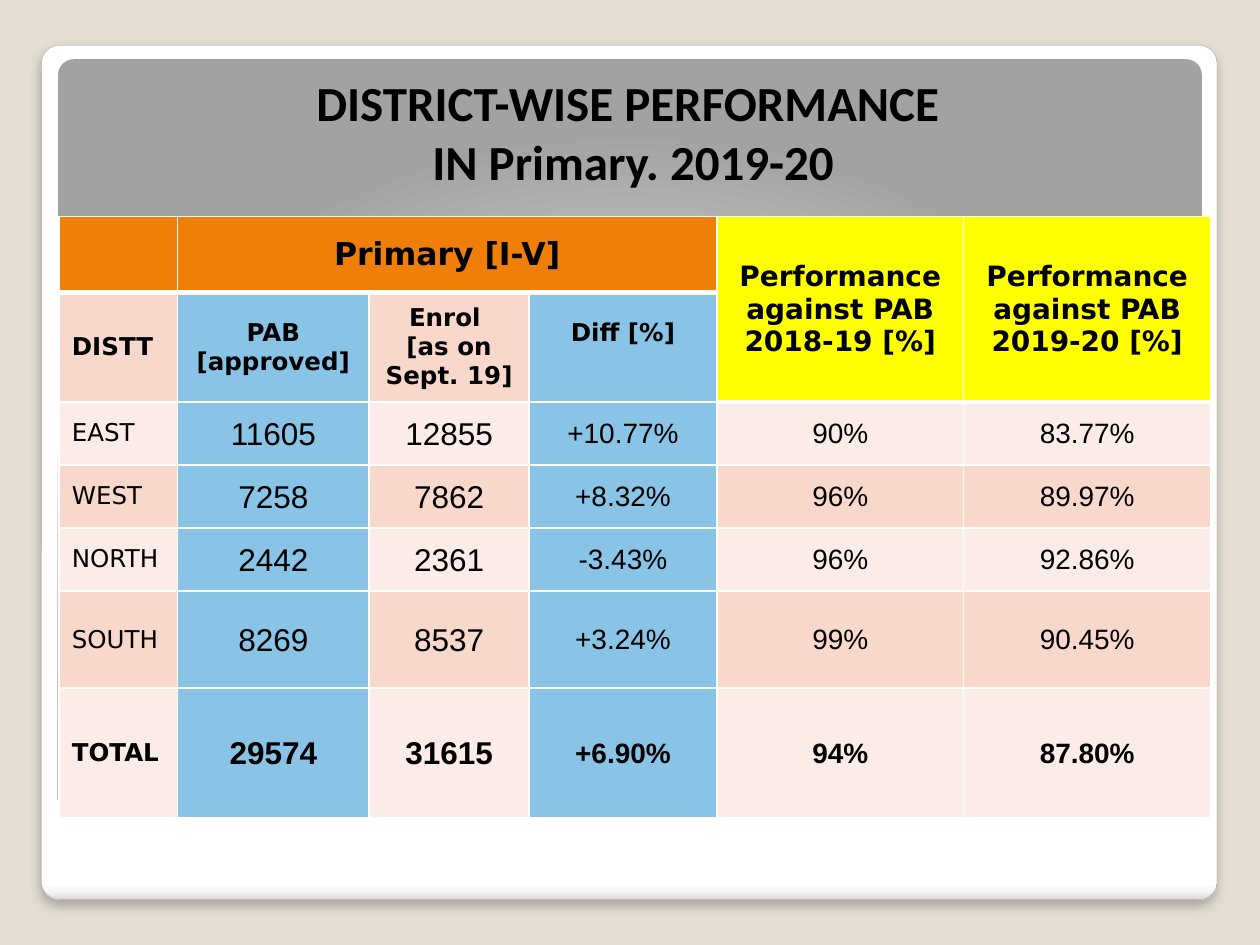
from lxml import etree
from pptx import Presentation
from pptx import util as u
from pptx.dml.color import RGBColor
from pptx.enum import shapes, text
from pptx.oxml import parse_xml
from pptx.oxml.ns import nsdecls, qn

BEIGE = RGBColor(0xE3, 0xDE, 0xD1)
EDGE = RGBColor(0xA4, 0xA4, 0xA4)
BLACK = RGBColor(0, 0, 0)
ORANGE = RGBColor(0xF0, 0x7F, 0x09)
YELLOW = RGBColor(0xFF, 0xFF, 0)
BLUE = RGBColor(0x89, 0xC3, 0xE5)
PINK = RGBColor(0xF9, 0xD8, 0xCC)
PALE = RGBColor(0xFC, 0xEC, 0xE7)

deck = Presentation()
deck.slide_width, deck.slide_height = u.Inches(10), u.Inches(7.5)
page = deck.slides.add_slide(deck.slide_layouts[5])
page.background.fill.solid()
page.background.fill.fore_color.rgb = BEIGE


def add_panel(bounds, stops, direction):
    """Rounded panel with a gradient given as (percent, colour) stops."""
    panel = page.shapes.add_shape(shapes.MSO_SHAPE.ROUNDED_RECTANGLE,
                                  *[u.Inches(v) for v in bounds])
    panel.adjustments[0] = 0.021
    panel.shadow.inherit = False
    panel.line.fill.background()
    marks = "".join(f'<a:gs pos="{at * 1000}"><a:srgbClr val="{colour}"/></a:gs>'
                    for at, colour in stops)
    gradient = parse_xml(f'<a:gradFill {nsdecls("a")} rotWithShape="1">'
                         f'<a:gsLst>{marks}</a:gsLst>{direction}</a:gradFill>')
    panel._element.spPr.find(qn("a:prstGeom")).addnext(gradient)
    return panel


def write_cell(cell, lines, fill, size, font="DejaVu Sans", bold=False,
               align=text.PP_ALIGN.CENTER):
    cell.fill.solid()
    cell.fill.fore_color.rgb = fill
    cell.vertical_anchor = text.MSO_ANCHOR.MIDDLE
    for number, line in enumerate(lines):
        para = cell.text_frame.paragraphs[0] if number == 0 else cell.text_frame.add_paragraph()
        para.alignment = align
        span = para.add_run()
        span.text = line
        span.font.name, span.font.size = font, u.Pt(size)
        span.font.bold, span.font.color.rgb = bold, BLACK


# Background panels
sheet = add_panel((0.33, 0.36, 9.33, 6.78),
                  [(0, "FFFFFF"), (98, "FFFFFF"), (99, "F7F7F7"), (100, "DADADA")],
                  '<a:lin ang="5400000" scaled="0"/>')
sheet.line.color.rgb = EDGE
sheet.line.width = u.Pt(0.16)
effects = sheet._element.spPr.find(qn("a:effectLst"))
effects.append(parse_xml(
    f'<a:outerShdw {nsdecls("a")} blurRad="{u.Pt(6)}" dist="{u.Pt(4)}" dir="5400000" '
    'algn="t" rotWithShape="0"><a:srgbClr val="000000"><a:alpha val="25000"/>'
    '</a:srgbClr></a:outerShdw>'))
add_panel((0.46, 0.47, 9.08, 6), [(0, "FFFFFF"), (55, "E1E1E1"), (100, "A2A2A2")],
          '<a:path path="circle"><a:fillToRect l="50000" t="175000" r="50000" '
          'b="-75000"/></a:path>')

# Title, brought in front of the panels
title = page.shapes.title
page.shapes._spTree.append(title._element)
title.left, title.top, title.width, title.height = [u.Inches(v) for v in (0.39, 0.23, 9.27, 1.33)]
frame = title.text_frame
frame.auto_size = text.MSO_AUTO_SIZE.NONE
frame.vertical_anchor = text.MSO_ANCHOR.BOTTOM
para = frame.paragraphs[0]
para.alignment = text.PP_ALIGN.CENTER
for number, line in enumerate(("DISTRICT-WISE PERFORMANCE ", "IN Primary. 2019-20")):
    if number:
        para.add_line_break()
    span = para.add_run()
    span.text = line
    span.font.name, span.font.size = "Calibri", u.Pt(28)
    span.font.bold, span.font.color.rgb = True, BLACK

# Table grid
widths = [0.94, 1.52, 1.27, 1.49, 1.96, 1.96]
heights = [0.6, 0.87, 0.5, 0.5, 0.5, 0.77, 1.03]
frame = page.shapes.add_table(len(heights), len(widths), u.Inches(0.47), u.Inches(1.72),
                              u.Inches(sum(widths)), u.Inches(sum(heights)))
table = frame.table
table.first_row = table.horz_banding = False
for column, width in zip(table.columns, widths):
    column.width = u.Inches(width)
for row, height in zip(table.rows, heights):
    row.height = u.Inches(height)

# Header rows
table.cell(0, 1).merge(table.cell(0, 3))
write_cell(table.cell(0, 0), [], ORANGE, 18)
write_cell(table.cell(0, 1), ["Primary [I-V]"], ORANGE, 18, bold=True)
for column, year in ((4, "2018-19"), (5, "2019-20")):
    table.cell(0, column).merge(table.cell(1, column))
    write_cell(table.cell(0, column), ["Performance against PAB", f"{year} [%]"],
               YELLOW, 16, bold=True)
write_cell(table.cell(1, 0), ["DISTT"], PINK, 14, bold=True, align=text.PP_ALIGN.LEFT)
write_cell(table.cell(1, 1), ["PAB [approved]"], BLUE, 14, bold=True)
write_cell(table.cell(1, 2), ["Enrol ", "[as on Sept. 19]"], PINK, 14, bold=True)
write_cell(table.cell(1, 3), ["Diff [%]"], BLUE, 14, bold=True)
table.cell(1, 3).margin_bottom = u.Inches(0.28)

# District rows
districts = [
    ("EAST", "11605", "12855", "+10.77%", "90%", "83.77%"),
    ("WEST", "7258", "7862", "+8.32%", "96%", "89.97%"),
    ("NORTH", "2442", "2361", "-3.43%", "96%", "92.86%"),
    ("SOUTH", "8269", "8537", "+3.24%", "99%", "90.45%"),
    ("TOTAL", "29574", "31615", "+6.90%", "94%", "87.80%"),
]
for r, values in enumerate(districts, start=2):
    band = PINK if r % 2 else PALE
    total = values[0] == "TOTAL"
    write_cell(table.cell(r, 0), values[:1], band, 14, bold=total, align=text.PP_ALIGN.LEFT)
    for c, value in enumerate(values[1:], start=1):
        cell = table.cell(r, c)
        write_cell(cell, [value], BLUE if c in (1, 3) else band,
                   18 if c < 3 else 16, "Arial", total)
        cell.margin_left = cell.margin_right = cell.margin_top = u.Inches(0.01)
        cell.margin_bottom = 0

# White cell borders, heavier under the header
for r in range(len(heights)):
    for c in range(len(widths)):
        heavy = {"lnB"} if r == 0 or (r == 1 and c > 3) else set()
        if (r == 1 and c < 4) or (r == 2 and c > 3):
            heavy.add("lnT")
        properties = table.cell(r, c)._tc.get_or_add_tcPr()
        for place, side in enumerate(("lnL", "lnR", "lnT", "lnB")):
            line = etree.Element(qn(f"a:{side}"), w=str(u.Pt(3 if side in heavy else 1)))
            fill = etree.SubElement(line, qn("a:solidFill"))
            etree.SubElement(fill, qn("a:srgbClr"), val="FFFFFF")
            properties.insert(place, line)

deck.save("out.pptx")
